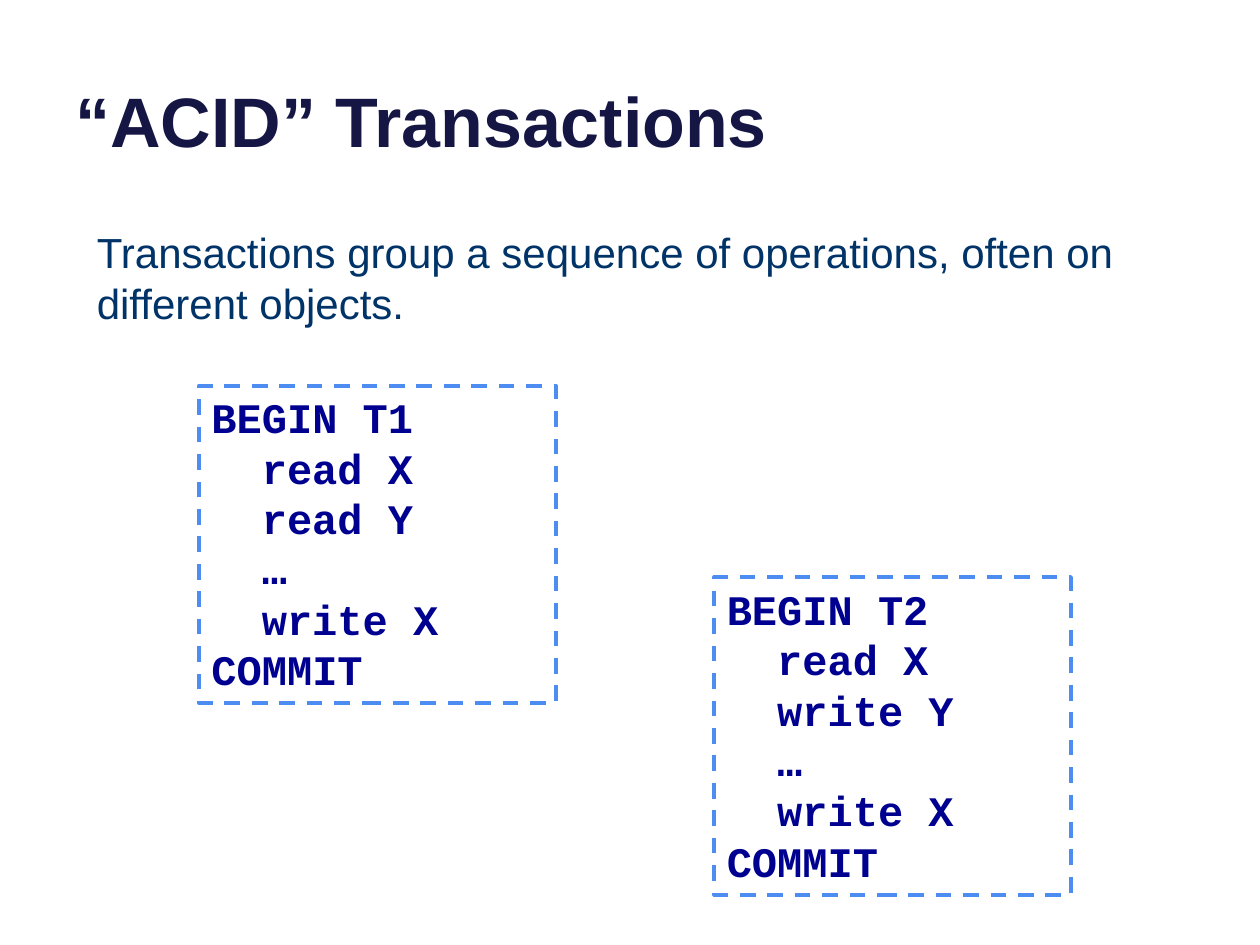
"""Build a slide introducing ACID transactions with two example transactions."""
import pptx
import pptx.dml.color
import pptx.enum.dml
import pptx.enum.shapes
import pptx.enum.text
import pptx.util

Inches = pptx.util.Inches
Pt = pptx.util.Pt
RGBColor = pptx.dml.color.RGBColor
Anchor = pptx.enum.text.MSO_ANCHOR

TITLE = "“ACID” Transactions"
SUMMARY = "Transactions group a sequence of operations, often on different objects."
TRANSACTIONS = [
    {"name": "T1", "steps": ["read X", "read Y", "…", "write X"], "corner": (1.58, 3.06)},
    {"name": "T2", "steps": ["read X", "write Y", "…", "write X"], "corner": (5.67, 4.58)},
]
TRANSACTION_SIZE = (2.83, 2.52)
STEP_INDENT = 0.4

THEME = {
    "title": {"size": 40, "font": "Arial", "color": "161645", "bold": True},
    "summary": {"size": 24, "font": "Arial", "color": "003367", "bold": False},
    "code": {"size": 24, "font": "Courier New", "color": "000090", "bold": True},
    "border": {"color": "4D8CF1", "width": 2.25},
}


def write_text(holder, lines, *, size, font, color, bold, anchor=Anchor.TOP):
    """Fill a shape with (text, indent) lines in one format."""
    frame = holder.text_frame
    frame.word_wrap = True
    frame.vertical_anchor = anchor
    for index, (text, indent) in enumerate(lines):
        paragraph = frame.paragraphs[0] if index == 0 else frame.add_paragraph()
        paragraph.alignment = pptx.enum.text.PP_ALIGN.LEFT
        if indent:
            paragraph._p.get_or_add_pPr().set("marL", str(Inches(indent)))
        run = paragraph.add_run()
        run.text = text
        run.font.size = Pt(size)
        run.font.name = font
        run.font.bold = bold
        run.font.color.rgb = RGBColor.from_string(color)


def add_transaction(slide, transaction):
    """Draw a dashed box holding one transaction's code."""
    bounds = map(Inches, transaction["corner"] + TRANSACTION_SIZE)
    box = slide.shapes.add_shape(pptx.enum.shapes.MSO_SHAPE.RECTANGLE, *bounds)
    box.shadow.inherit = False
    box.fill.background()
    box.line.color.rgb = RGBColor.from_string(THEME["border"]["color"])
    box.line.width = Pt(THEME["border"]["width"])
    box.line.dash_style = pptx.enum.dml.MSO_LINE.DASH
    steps = [(step, STEP_INDENT) for step in transaction["steps"]]
    code = [(f"BEGIN {transaction['name']}", 0), *steps, ("COMMIT", 0)]
    write_text(box, code, **THEME["code"])


def main():
    """Assemble and save the slide."""
    deck = pptx.Presentation()
    deck.slide_width, deck.slide_height = Inches(10), Inches(7.5)
    slide = deck.slides.add_slide(deck.slide_layouts[6])
    heading = slide.shapes.add_textbox(*map(Inches, (0.5, -0.37, 9, 1.7)))
    write_text(heading, [(TITLE, 0)], anchor=Anchor.BOTTOM, **THEME["title"])
    summary = slide.shapes.add_textbox(*map(Inches, (0.67, 1.75, 8.42, 0.91)))
    write_text(summary, [(SUMMARY, 0)], **THEME["summary"])
    for transaction in TRANSACTIONS:
        add_transaction(slide, transaction)
    deck.save("out.pptx")


if __name__ == "__main__":
    main()
